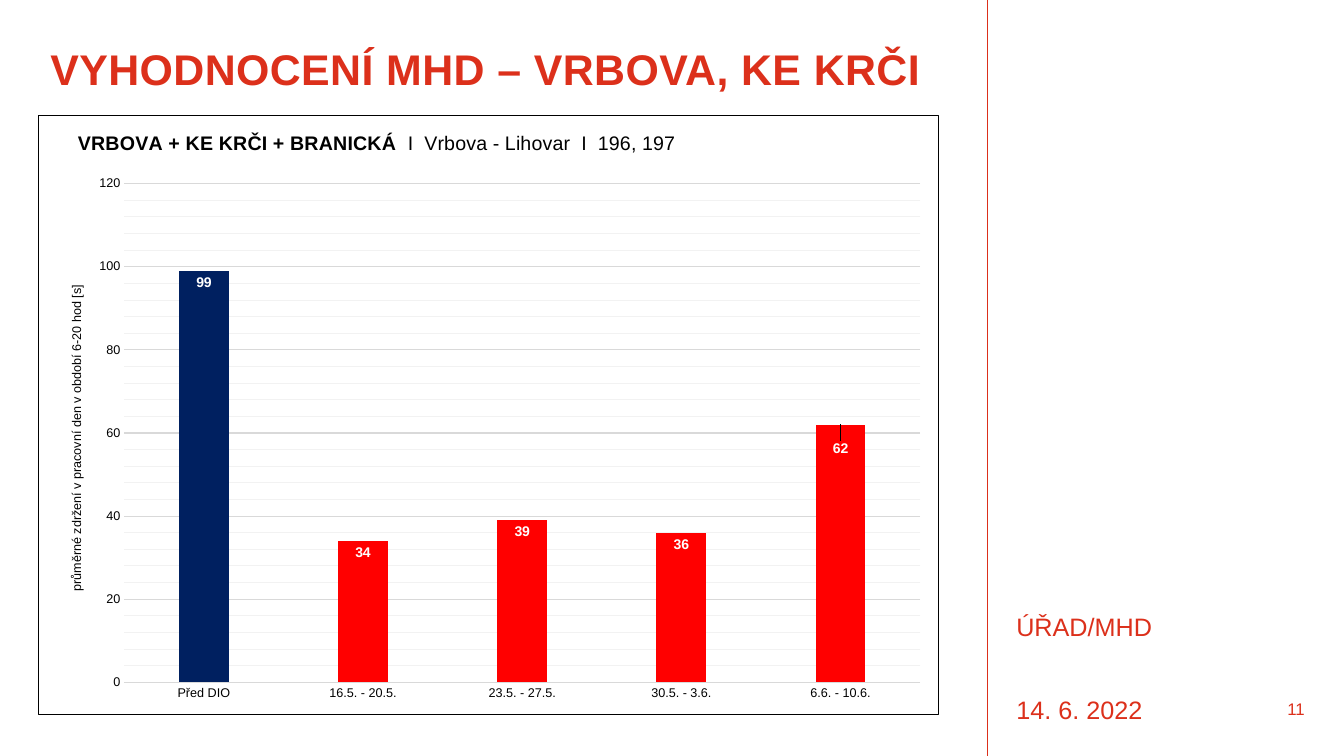
"""Build the slide on average bus delays in Vrbova and Ke Krči."""
import copy

import pptx
import pptx.chart.data
import pptx.dml.color
import pptx.enum.chart
import pptx.enum.shapes
import pptx.enum.text
import pptx.oxml
import pptx.oxml.ns
import pptx.util

Inches, Pt = pptx.util.Inches, pptx.util.Pt
Color = pptx.dml.color.RGBColor
qn = pptx.oxml.ns.qn
ALIGN = pptx.enum.text.PP_ALIGN
ANCHOR = pptx.enum.text.MSO_ANCHOR

FONT = "Arial"
ACCENT = Color(0xDC, 0x30, 0x1B)
BLACK = Color(0, 0, 0)
WHITE = Color(0xFF, 0xFF, 0xFF)
NAVY = Color(0x00, 0x20, 0x60)
RED = Color(0xFF, 0, 0)
GRID = Color(0xD9, 0xD9, 0xD9)
FINE_GRID = Color(0xF2, 0xF2, 0xF2)

DELAYS = {"Před DIO": 99, "16.5. - 20.5.": 34, "23.5. - 27.5.": 39,
          "30.5. - 3.6.": 36, "6.6. - 10.6.": 62}
CHART_TITLE = [("VRBOVA + KE KRČI + BRANICKÁ", True),
               ("  I  Vrbova - Lihovar  I  196, 197", False)]
AXIS_TITLE = "průměrné zdržení v pracovní den v období 6-20 hod [s]"
CHART_AREA = (0.38, 1.14, 8.93, 5.95)
DIVIDER_X = 9.79
TEXTS = [
    ("VYHODNOCENÍ MHD – VRBOVA, KE KRČI", (0.5, 0.5, 9.22, 0.53), 30.6, True, 0.85, ALIGN.LEFT, ANCHOR.TOP),
    ("ÚŘAD/MHD", (10.08, 6.1, 2.86, 0.34), 18, False, 0.9, ALIGN.LEFT, ANCHOR.TOP),
    ("14. 6. 2022", (10.08, 6.89, 2.07, 0.31), 18, False, 1.0, ALIGN.LEFT, ANCHOR.TOP),
    ("11", (12.27, 6.83, 0.67, 0.4), 12, False, 1.0, ALIGN.RIGHT, ANCHOR.MIDDLE),
]
CHART_SPACE = ('<c:spPr xmlns:c="http://schemas.openxmlformats.org/drawingml/2006/chart" '
               'xmlns:a="http://schemas.openxmlformats.org/drawingml/2006/main">'
               '<a:solidFill><a:srgbClr val="FFFFFF"/></a:solidFill><a:ln w="9525">'
               '<a:solidFill><a:srgbClr val="000000"/></a:solidFill></a:ln></c:spPr>')


def style(font, size, color, bold=False):
    font.name, font.size, font.bold = FONT, Pt(size), bold
    font.color.rgb = color


def add_text(page, text, area, size, bold, spacing, align, anchor):
    box = page.shapes.add_textbox(*map(Inches, area))
    frame = box.text_frame
    frame.margin_left = frame.margin_right = frame.margin_top = frame.margin_bottom = 0
    frame.word_wrap = True
    frame.vertical_anchor = anchor
    frame.text = text
    para = frame.paragraphs[0]
    para.alignment, para.line_spacing = align, spacing
    style(para.runs[0].font, size, ACCENT, bold)
    return box


def set_layout(parent, index, **settings):
    for old in parent.findall(qn("c:layout")):
        parent.remove(old)
    layout = parent.makeelement(qn("c:layout"), {})
    manual = layout.makeelement(qn("c:manualLayout"), {})
    layout.append(manual)
    for name, value in settings.items():
        manual.append(manual.makeelement(qn("c:" + name), {"val": str(value)}))
    parent.insert(index, layout)


def style_gridlines(axis):
    axis.has_major_gridlines = axis.has_minor_gridlines = True
    line = axis.major_gridlines.format.line
    line.color.rgb = GRID
    line.width = Pt(0.75)
    major = axis._element.find(qn("c:majorGridlines"))
    minor = axis._element.find(qn("c:minorGridlines"))
    fine = copy.deepcopy(major.find(qn("c:spPr")))
    fine.find(".//" + qn("a:srgbClr")).set("val", str(FINE_GRID))
    minor.append(fine)


def style_axes(chart):
    categories, values = chart.category_axis, chart.value_axis
    for axis in (categories, values):
        axis.major_tick_mark = axis.minor_tick_mark = pptx.enum.chart.XL_TICK_MARK.NONE
        style(axis.tick_labels.font, 9, BLACK)
    categories.format.line.color.rgb = GRID
    categories.format.line.width = Pt(0.75)
    values.format.line.fill.background()
    values.minimum_scale, values.maximum_scale = 0, 120
    values.major_unit, values.minor_unit = 20, 4
    style_gridlines(values)
    title = values.axis_title
    title.text_frame.text = AXIS_TITLE
    style(title.text_frame.paragraphs[0].runs[0].font, 9, BLACK)
    body = title._element.find(".//" + qn("a:bodyPr"))
    body.set("rot", "-5400000")
    body.set("vert", "horz")
    set_layout(title._element, 1, xMode="edge", yMode="edge", x=0.03, y=0.28)


def style_series(series):
    series.format.fill.solid()
    series.format.fill.fore_color.rgb = RED
    before = series.points[0].format.fill
    before.solid()
    before.fore_color.rgb = NAVY
    labels = series.data_labels
    labels.show_value = True
    last = series.points[len(DELAYS) - 1].data_label
    for label in (labels, last):
        label.position = pptx.enum.chart.XL_LABEL_POSITION.INSIDE_END
        style(label.font, 10, WHITE, True)
    set_layout(labels._element.find(qn("c:dLbl")), 1, x=0, y=0.02)


def add_delay_chart(page):
    data = pptx.chart.data.CategoryChartData()
    data.categories = list(DELAYS)
    data.add_series("Series 1", list(DELAYS.values()))
    kind = pptx.enum.chart.XL_CHART_TYPE.COLUMN_CLUSTERED
    chart = page.shapes.add_chart(kind, *map(Inches, CHART_AREA), data).chart
    style(chart.font, 9, BLACK)
    chart.has_legend = False
    chart.has_title = True
    title = chart.chart_title
    para = title.text_frame.paragraphs[0]
    for text, bold in CHART_TITLE:
        span = para.add_run()
        span.text = text
        style(span.font, 14, BLACK, bold)
    set_layout(title._element, 1, xMode="edge", yMode="edge", x=0.04, y=0.02)
    plot = chart.plots[0]
    plot.gap_width, plot.vary_by_categories = 219, False
    style_axes(chart)
    style_series(plot.series[0])
    root = chart._chartSpace
    set_layout(root.find(".//" + qn("c:plotArea")), 0, layoutTarget="inner",
               xMode="edge", yMode="edge", x=0.095, y=0.114, w=0.885, h=0.833)
    root.find(qn("c:txPr")).addprevious(pptx.oxml.parse_xml(CHART_SPACE))


def main():
    deck = pptx.Presentation()
    deck.slide_width, deck.slide_height = Inches(13.33), Inches(7.5)
    page = deck.slides.add_slide(deck.slide_layouts[6])
    divider = page.shapes.add_connector(pptx.enum.shapes.MSO_CONNECTOR.STRAIGHT,
                                        Inches(DIVIDER_X), 0, Inches(DIVIDER_X), deck.slide_height)
    divider.line.color.rgb = ACCENT
    divider.line.width = Pt(0.5)
    properties = divider._element.spPr
    properties.append(properties.makeelement(qn("a:effectLst"), {}))
    add_delay_chart(page)
    boxes = [add_text(page, *entry) for entry in TEXTS]
    heading = boxes[0].text_frame.paragraphs[0].runs[0]
    heading.font._element.set("spc", "30")
    deck.save("out.pptx")


if __name__ == "__main__":
    main()
